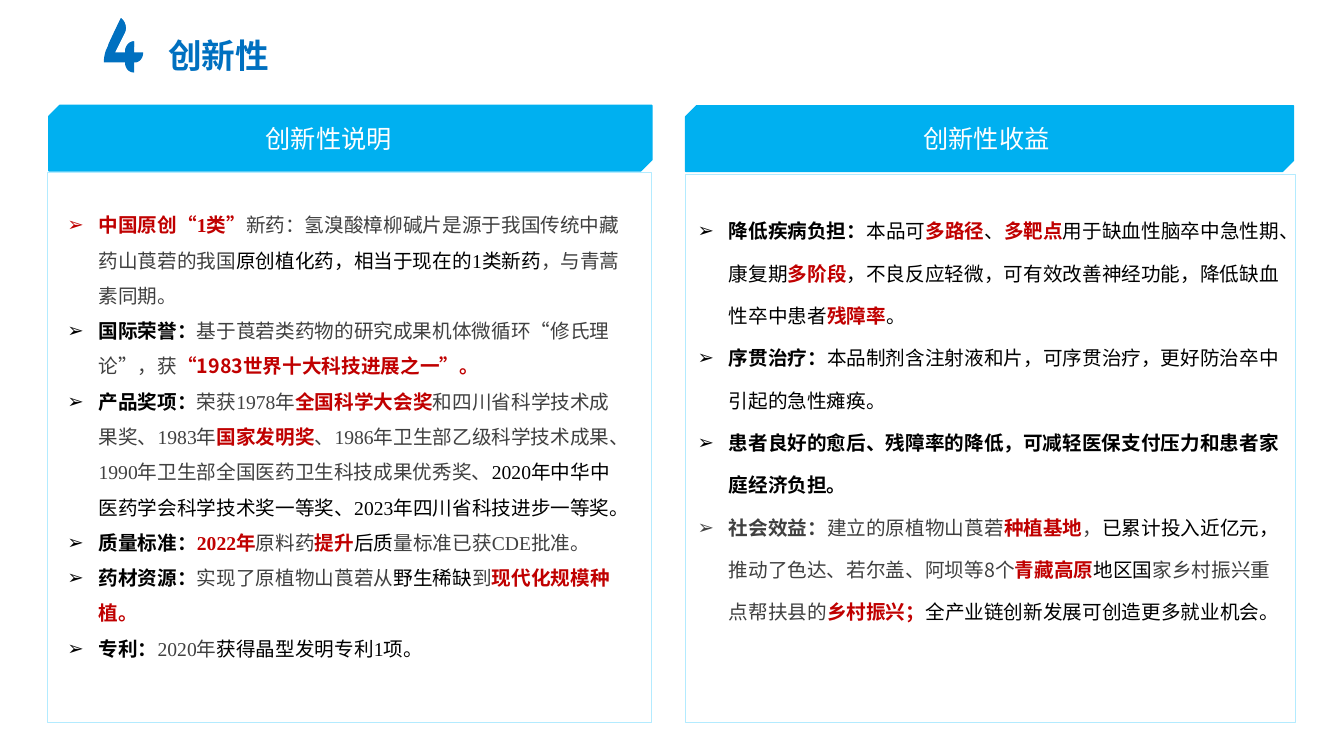
from lxml import etree
from pptx import Presentation
from pptx.dml.color import RGBColor
from pptx.enum.lang import MSO_LANGUAGE_ID
from pptx.enum.shapes import MSO_SHAPE
from pptx.enum.text import MSO_ANCHOR, MSO_AUTO_SIZE, PP_ALIGN
from pptx.oxml.ns import qn
from pptx.util import Pt

RECTANGLE = MSO_SHAPE.RECTANGLE
SNIPPED = MSO_SHAPE.SNIP_2_DIAG_RECTANGLE
CENTER, LEFT = PP_ALIGN.CENTER, PP_ALIGN.LEFT
TOP = MSO_ANCHOR.TOP
NO_FIT = MSO_AUTO_SIZE.NONE
CHINESE = MSO_LANGUAGE_ID.SIMPLIFIED_CHINESE

PX = 9144
WHITE = RGBColor(0xFF, 0xFF, 0xFF)
BLACK = RGBColor(0x00, 0x00, 0x00)
GRAY = RGBColor(0x40, 0x40, 0x40)
RED = RGBColor(0xC0, 0x00, 0x00)
BLUE = RGBColor(0x00, 0x70, 0xC0)
SKY = RGBColor(0x00, 0xB0, 0xF0)
PALE = RGBColor(0xB3, 0xEB, 0xFF)
SANS, SERIF, LATIN = "Noto Sans CJK SC", "Times New Roman", "Arial"

HEAD = {"color": BLACK, "bold": True}
PLAIN = {"color": BLACK, "bold": False}
SOFT = {"color": GRAY, "bold": False}
SOFT_HEAD = {"color": GRAY, "bold": True}
KEY = {"color": RED, "bold": True}
KEY_SANS = {"color": RED, "bold": True, "name": SANS}

EXPLANATION = [
    [("中国原创“1类”", KEY), ("新药：氢溴酸樟柳碱片是源于我国传统中藏药山莨菪的我国", SOFT),
     ("原创植化药，相当于现在的1类新药", PLAIN), ("，与青蒿素同期。", SOFT)],
    [("国际荣誉：", HEAD), ("基于莨菪类药物的研究成果机体微循环“修氏理论”，获", SOFT),
     ("“1983世界十大科技进展之一”", KEY_SANS), ("。", KEY)],
    [("产品奖项：", HEAD), ("荣获1978年", SOFT), ("全国科学大会奖", KEY),
     ("和四川省科学技术成果奖、1983年", SOFT), ("国家发明奖", KEY),
     ("、1986年卫生部乙级科学技术成果、1990年卫生部全国医药卫生科技成果优秀奖、", SOFT),
     ("2020年中华中医药学会科学技术奖一等奖、2023年四川省科技进步一等奖。", PLAIN)],
    [("质量标准：", HEAD), ("2022年", KEY), ("原料药", SOFT), ("提升", KEY),
     ("后质", PLAIN), ("量标准已获CDE批准。", SOFT)],
    [("药材资源：", HEAD), ("实现了原植物山莨菪从", SOFT), ("野生稀缺", PLAIN),
     ("到", SOFT), ("现代化规模种植。", KEY)],
    [("专利：", HEAD), ("2020年", SOFT), ("获得晶型发明专利1项。", PLAIN)],
]
BENEFITS = [
    [("降低疾病负担：", HEAD), ("本品可", PLAIN), ("多路径", KEY), ("、", PLAIN),
     ("多靶点", KEY), ("用于缺血性脑卒中急性期、康复期", PLAIN), ("多阶段", KEY),
     ("，不良反应轻微，可有效改善神经功能，降低缺血性卒中患者", PLAIN),
     ("残障率", KEY), ("。", PLAIN)],
    [("序贯治疗：", HEAD),
     ("本品制剂含注射液和片，可序贯治疗，更好防治卒中引起的急性瘫痪。", PLAIN)],
    [("患者良好的愈后、残障率的降低，可减轻医保支付压力和患者家庭经济负担。", HEAD)],
    [("社会效益：", SOFT_HEAD), ("建立的原植物山莨菪", SOFT), ("种植基地", KEY),
     ("，", SOFT), ("已累计投入近亿元，", PLAIN), ("推动了色达、若尔盖、阿坝等8个", SOFT),
     ("青藏高原", KEY), ("地区国", PLAIN), ("家乡村振兴重点帮扶县的", SOFT),
     ("乡村振兴；", KEY), ("全产业链创新发展可创造更多就业机会。", PLAIN)],
]
FOUR_OUTLINES = [
    [(124, 62), (103, 62), (103, 57, 104, 52, 106, 48), (120, 18),
     (124, 21, 126, 27, 124, 32), (114, 52), (124, 52), (124, 46, 128, 41, 133, 41),
     (133, 52), (142, 52), (142, 58, 138, 62, 134, 62), (133, 62), (133, 72),
     (128, 72, 124, 68, 124, 62)],
    [(114, 52), (124, 32), (126, 27, 124, 21, 120, 18), (120, 18, 113, 32, 108, 43),
     (106, 47, 109, 52, 114, 52)],
    [(133, 41), (128, 41, 124, 46, 124, 51), (124, 52), (127, 52),
     (131, 52, 133, 49, 133, 45)],
]


def curve_points(start, curve, steps=10):
    knots = [start, curve[:2], curve[2:4], curve[4:]]
    for step in range(1, steps + 1):
        t = step / steps
        weights = ((1 - t) ** 3, 3 * t * (1 - t) ** 2, 3 * t * t * (1 - t), t ** 3)
        yield tuple(sum(w * knot[axis] for w, knot in zip(weights, knots)) for axis in (0, 1))


def to_emu(point):
    return tuple(round(value * PX) for value in point)


class SlideBuilder:
    def __init__(self, page):
        self.page = page
        self.frame_format = {"word_wrap": True, "auto_size": NO_FIT, "vertical_anchor": TOP}

    def place(self, item, bounds):
        for name, value in zip(("left", "top", "width", "height"), bounds):
            setattr(item, name, value * PX)

    def shape(self, kind, bounds, fill, line, rotation=0):
        box = self.page.shapes.add_shape(kind, *(value * PX for value in bounds))
        box.rotation = rotation
        box.shadow.inherit = False
        box.fill.solid()
        box.fill.fore_color.rgb = fill
        box.line.color.rgb = line
        box.line.width = Pt(1)

    def span(self, para, text, color, **values):
        span = para.add_run()
        span.text = text
        span.font.color.rgb = color
        for name, value in {"language_id": CHINESE, **values}.items():
            setattr(span.font, name, value)
        etree.SubElement(span.font._element, qn("a:ea")).set("typeface", SANS)

    def frame(self, box):
        for name, value in self.frame_format.items():
            setattr(box.text_frame, name, value)
        return box.text_frame

    def text(self, bounds):
        return self.frame(self.page.shapes.add_textbox(*(value * PX for value in bounds)))

    def title(self, bounds, text):
        box = self.page.shapes.title
        self.place(box, bounds)
        para = self.frame(box).paragraphs[0]
        para.alignment = LEFT
        para.line_spacing = 0.9
        self.span(para, text, BLUE, name=LATIN, size=Pt(24), bold=True)

    def heading(self, bounds, text):
        para = self.text(bounds).paragraphs[0]
        para.alignment = CENTER
        self.span(para, text, WHITE, name=SANS, size=Pt(18))

    def bullets(self, bounds, items, font, spacing):
        frame = self.text(bounds)
        for index, spans in enumerate(items):
            para = frame.add_paragraph() if index else frame.paragraphs[0]
            para.line_spacing = spacing
            properties = para._p.get_or_add_pPr()
            properties.set("marL", str(31 * PX))
            properties.set("indent", str(-31 * PX))
            etree.SubElement(properties, qn("a:buFont")).set("typeface", LATIN)
            etree.SubElement(properties, qn("a:buChar")).set("char", "➢")
            for text, style in spans:
                self.span(para, text, **{"name": font, "size": Pt(14), **style})

    def outlines(self, paths, fill):
        group = self.page.shapes.add_group_shape()
        for path in paths:
            points = [path[0]]
            for step in path[1:]:
                points.extend([step] if len(step) == 2 else curve_points(points[-1], step))
            start, *rest = map(to_emu, points)
            builder = group.shapes.build_freeform(*start, scale=1.0)
            builder.add_line_segments(rest, close=True)
            outline = builder.convert_to_shape()
            outline.shadow.inherit = False
            outline.fill.solid()
            outline.fill.fore_color.rgb = fill
            outline.line.fill.background()


def main():
    deck = Presentation()
    deck.slide_width, deck.slide_height = 1333 * PX, 750 * PX
    slide = SlideBuilder(deck.slides.add_slide(deck.slide_layouts[5]))
    slide.title((157, 34, 328, 65), "创新性")
    slide.outlines(FOUR_OUTLINES, BLUE)
    slide.shape(SNIPPED, (949, -164, 65, 603), SKY, SKY, 270)
    slide.shape(SNIPPED, (315, -162, 65, 598), SKY, SKY, 270)
    slide.shape(RECTANGLE, (680, 173, 605, 544), WHITE, PALE)
    slide.shape(RECTANGLE, (47, 171, 599, 546), WHITE, PALE)
    slide.heading((18, 117, 616, 40), "创新性说明")
    slide.heading((676, 117, 605, 40), "创新性收益")
    slide.bullets((57, 195, 576, 555), EXPLANATION, SERIF, 1.5)
    slide.bullets((682, 194, 603, 477), BENEFITS, SANS, 1.8)
    deck.save("out.pptx")


if __name__ == "__main__":
    main()
